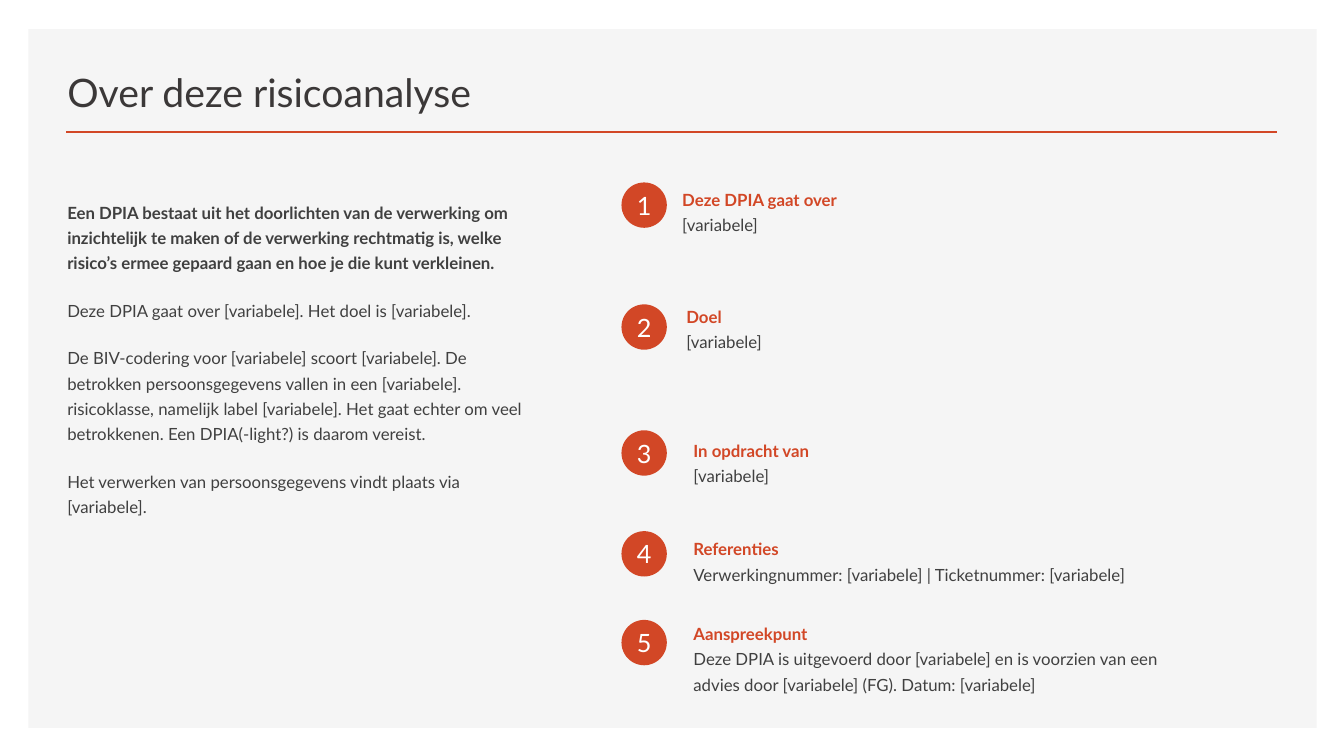
from pptx import Presentation
from pptx.dml.color import RGBColor
from pptx.enum.shapes import MSO_CONNECTOR as Connector, MSO_SHAPE as Shape
from pptx.enum.text import MSO_ANCHOR as Anchor, MSO_AUTO_SIZE as AutoSize, PP_ALIGN as Align
from pptx.oxml.ns import qn
from pptx.util import Pt
from lxml.etree import SubElement

TITLE = "Over deze risicoanalyse"
INTRO = [
    ("Een DPIA bestaat uit het doorlichten van de verwerking om inzichtelijk te maken of de "
     "verwerking rechtmatig is, welke risico’s ermee gepaard gaan en hoe je die kunt verkleinen."),
    "Deze DPIA gaat over [variabele]. Het doel is [variabele].",
    ("De BIV-codering voor [variabele] scoort [variabele]. De betrokken persoonsgegevens vallen "
     "in een [variabele]. risicoklasse, namelijk label [variabele]. Het gaat echter om veel "
     "betrokkenen. Een DPIA(-light?) is daarom vereist."),
    "Het verwerken van persoonsgegevens vindt plaats via [variabele].",
]
# heading, detail, circle top, detail left, detail top
ITEMS = [
    ("Deze DPIA gaat over", "[variabele]", 130.3, 480.2, 128.2),
    ("Doel", "[variabele]", 217.4, 483.1, 211.7),
    ("In opdracht van", "[variabele]", 307.4, 488.2, 307.4),
    ("Referenties", "Verwerkingnummer: [variabele] | Ticketnummer: [variabele]",
     379.4, 488.2, 378),
    ("Aanspreekpunt", "Deze DPIA is uitgevoerd door [variabele] en is voorzien van een advies "
     "door [variabele] (FG). Datum: [variabele]", 442.8, 488.2, 438.5),
]

THEME = {
    "font": "Lato",
    "panel": RGBColor.from_string("F5F5F5"),
    "accent": RGBColor.from_string("D24726"),
    "title": RGBColor.from_string("3B3838"),
    "body": RGBColor.from_string("404040"),
    "white": RGBColor.from_string("FFFFFF"),
    "title_size": Pt(28), "number_size": Pt(18), "body_size": Pt(12),
}
SPACING = {"line_spacing": Pt(18), "space_before": Pt(10), "space_after": Pt(6)}
CIRCLE_LEFT, CIRCLE_SIZE = 443.9, 32.4
DETAIL_WIDTH, DETAIL_HEIGHT = 361.4, 46.8


def apply(target, values):
    for key, value in values.items():
        setattr(target, key, value)


def write(paragraph, text, color, size="body_size", bold=False):
    run = paragraph.add_run()
    run.text = text
    apply(run.font, {"name": THEME["font"], "size": THEME[size], "bold": bold})
    run.font.color.rgb = THEME[color]


def add_filled(slide, kind, color, *box):
    shape = slide.shapes.add_shape(kind, *map(Pt, box))
    shape.shadow.inherit = False
    shape.fill.solid()
    shape.fill.fore_color.rgb = THEME[color]
    shape.line.fill.background()
    return shape


def add_text(slide, *box):
    frame = slide.shapes.add_textbox(*map(Pt, box)).text_frame
    frame.word_wrap = True
    return frame


def add_header(slide):
    panel = add_filled(slide, Shape.RECTANGLE, "panel", 20.2, 20.9, 920.2, 499)
    slide.shapes._spTree.insert(2, panel._element)
    rule = slide.shapes.add_connector(Connector.STRAIGHT, *map(Pt, (47.5, 94.3, 912.2, 94.3)))
    rule.line.color.rgb = THEME["accent"]
    rule.line.width = Pt(2)
    SubElement(rule._element.spPr, qn("a:effectLst"))
    title = slide.shapes.title
    apply(title, {"left": Pt(41), "top": Pt(35.3), "width": Pt(824.4), "height": Pt(50.4)})
    apply(title.text_frame, {"vertical_anchor": Anchor.BOTTOM, "auto_size": AutoSize.NONE})
    heading = title.text_frame.paragraphs[0]
    heading.alignment = Align.LEFT
    write(heading, TITLE, "title", "title_size")


def add_intro(slide):
    frame = add_text(slide, 41, 137.5, 340.6, 347.8)
    for index, text in enumerate(INTRO):
        paragraph = frame.add_paragraph() if index else frame.paragraphs[0]
        apply(paragraph, SPACING)
        write(paragraph, text, "body", bold=index == 0)


def add_item(slide, number, heading, detail, circle_top, left, top):
    circle = add_filled(slide, Shape.OVAL, "accent",
                        CIRCLE_LEFT, circle_top, CIRCLE_SIZE, CIRCLE_SIZE)
    apply(circle.text_frame, {"margin_left": 0, "margin_right": 0, "margin_top": 0,
                              "margin_bottom": 0, "word_wrap": False,
                              "vertical_anchor": Anchor.MIDDLE})
    label = circle.text_frame.paragraphs[0]
    label.alignment = Align.CENTER
    write(label, str(number), "white", "number_size")

    paragraph = add_text(slide, left, top, DETAIL_WIDTH, DETAIL_HEIGHT).paragraphs[0]
    apply(paragraph, SPACING)
    write(paragraph, heading, "accent", bold=True)
    paragraph.add_line_break()
    write(paragraph, detail, "body")


def main():
    """Build the slide that introduces the risk analysis."""
    deck = Presentation()
    apply(deck, {"slide_width": Pt(960), "slide_height": Pt(540)})
    slide = deck.slides.add_slide(deck.slide_layouts[5])
    add_header(slide)
    add_intro(slide)
    for number, item in enumerate(ITEMS, 1):
        add_item(slide, number, *item)
    deck.save("out.pptx")


if __name__ == "__main__":
    main()
